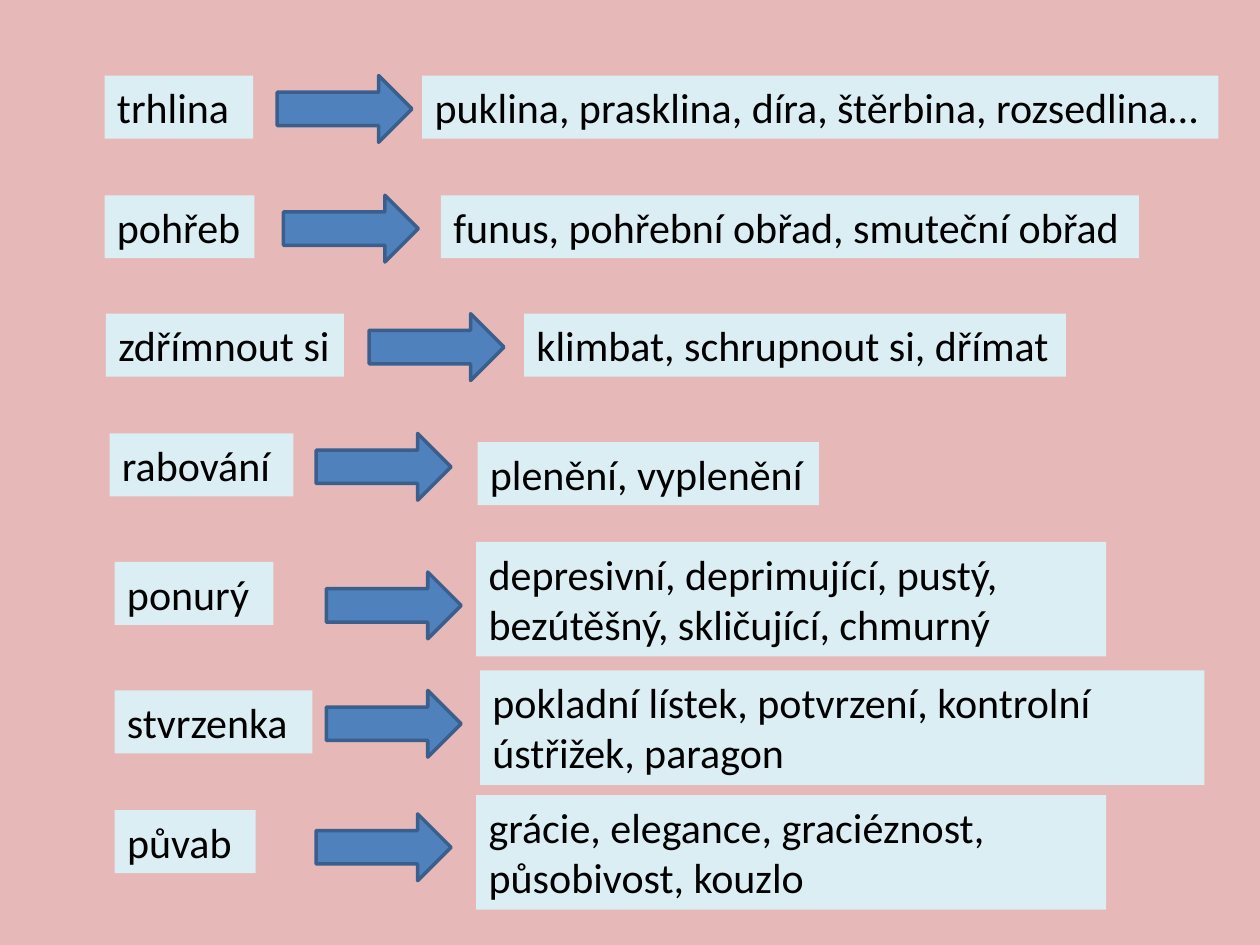
"""Build a slide that pairs Czech words with their synonyms."""
from pptx import Presentation
from pptx.dml.color import RGBColor as Rgb
from pptx.enum.shapes import MSO_SHAPE as Kind
from pptx.util import Inches, Pt

HUES = {"back": "E6B9B8", "box": "DBEEF4", "arrow": "4F81BD",
        "edge": "3A5F8C", "text": "000000"}
LINE, PAIR = 0.5, 0.91

WORDS = [
    ("trhlina", 0.83, 0.6, 1.18),
    ("pohřeb", 0.83, 1.55, 1.19),
    ("zdřímnout si", 0.84, 2.49, 1.89),
    ("rabování", 0.87, 3.44, 1.46),
    ("ponurý", 0.91, 4.46, 1.26),
    ("stvrzenka", 0.91, 5.48, 1.57),
    ("půvab", 0.91, 6.43, 1.12),
]
ARROWS = [(2.2, 0.6), (2.25, 1.55), (2.93, 2.49), (2.51, 3.44),
          (2.59, 4.54), (2.59, 5.48), (2.51, 6.46)]
MEANINGS = [
    ("puklina, prasklina, díra, štěrbina, rozsedlina…", 3.35, 0.6, 6.32, LINE),
    ("funus, pohřební obřad, smuteční obřad", 3.5, 1.55, 5.54, LINE),
    ("klimbat, schrupnout si, dřímat", 4.16, 2.49, 4.3, LINE),
    ("plenění, vyplenění", 3.79, 3.51, 2.71, LINE),
    ("depresivní, deprimující, pustý, bezútěšný, skličující, chmurný",
     3.78, 4.3, 5, PAIR),
    ("pokladní lístek, potvrzení, kontrolní ústřižek, paragon",
     3.81, 5.32, 5.75, PAIR),
    ("grácie, elegance, graciéznost, působivost, kouzlo",
     3.78, 6.31, 5, PAIR),
]


def paint(fill, hue):
    fill.solid()
    fill.fore_color.rgb = Rgb.from_string(HUES[hue])


def write(frame, text, size=24, font="Calibri", hue="text"):
    run = frame.paragraphs[0].add_run()
    run.text = text
    run.font.size = Pt(size)
    run.font.name = font
    run.font.color.rgb = Rgb.from_string(HUES[hue])


def add_box(slide, text, left, top, width, height=LINE):
    box = slide.shapes.add_textbox(
        Inches(left), Inches(top), Inches(width), Inches(height))
    paint(box.fill, "box")
    frame = box.text_frame
    frame.word_wrap = True
    frame.margin_right = 0
    write(frame, text)


def add_arrow(slide, left, top):
    arrow = slide.shapes.add_shape(
        Kind.RIGHT_ARROW, Inches(left), Inches(top), Inches(1.07), Inches(0.53))
    arrow.shadow.inherit = False
    paint(arrow.fill, "arrow")
    paint(arrow.line.fill, "edge")
    arrow.line.width = Pt(2)


def main():
    deck = Presentation()
    deck.slide_width, deck.slide_height = Inches(10), Inches(7.5)
    slide = deck.slides.add_slide(deck.slide_layouts[6])
    paint(slide.background.fill, "back")
    for word, spot, meaning in zip(WORDS, ARROWS, MEANINGS):
        add_box(slide, *word)
        add_arrow(slide, *spot)
        add_box(slide, *meaning)
    deck.save("out.pptx")


if __name__ == "__main__":
    main()
